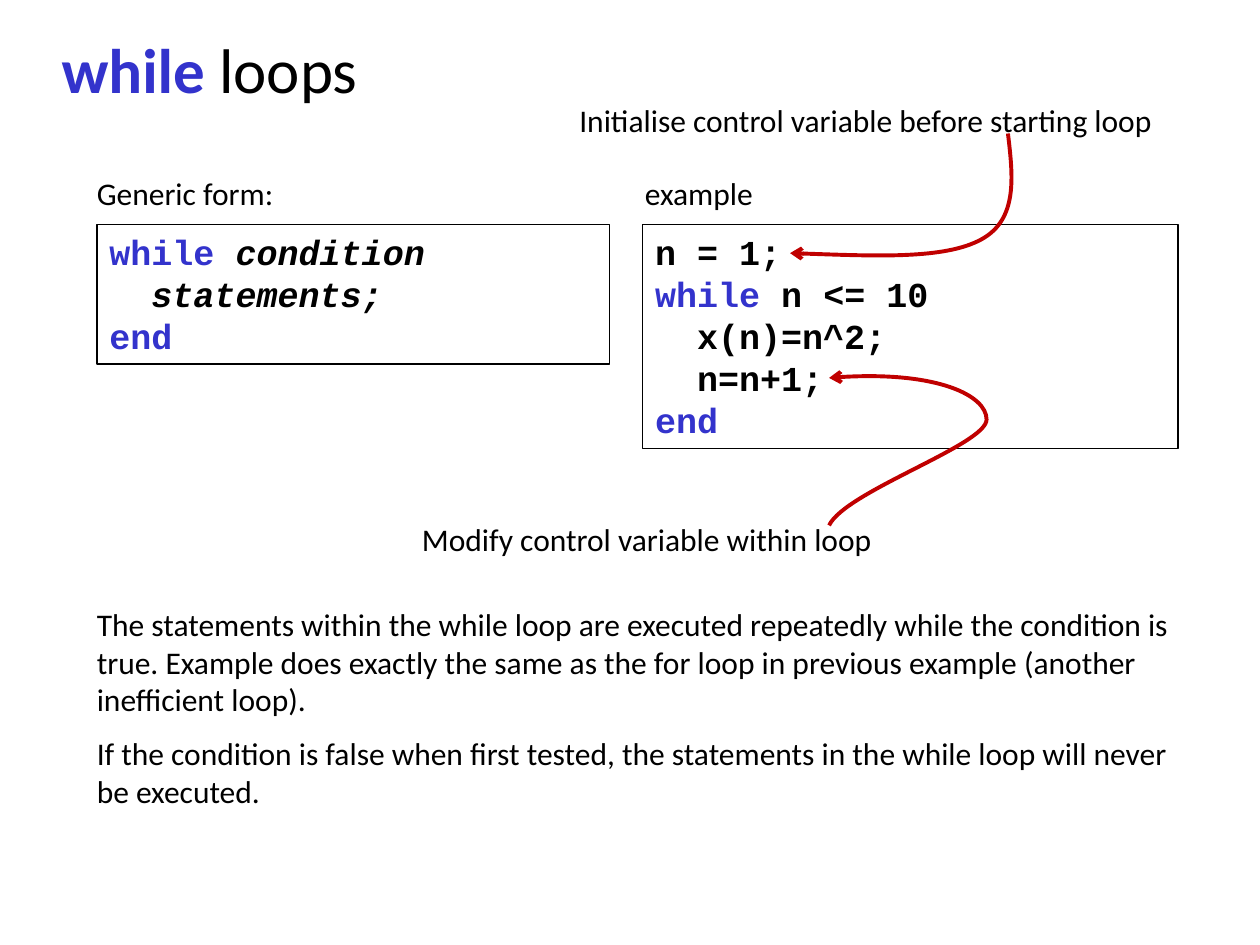
from lxml import etree
from pptx import Presentation
from pptx.dml.color import RGBColor
from pptx.enum import shapes, text
from pptx.oxml import ns
from pptx.util import Inches, Pt

BLACK = RGBColor(0x00, 0x00, 0x00)
WHITE = RGBColor(0xFF, 0xFF, 0xFF)
KEYWORD = RGBColor(0x33, 0x33, 0xCC)
ARROW = RGBColor(0xC0, 0x00, 0x00)
BODY_FONT, CODE_FONT = "Calibri", "Courier New"

# Content: a line is a list of (words, style); style is "", "key" or "italic"
TITLE = [[("while", "key"), (" loops", "")]]
GENERIC_CODE = [
    [("while ", "key"), ("condition", "italic")],
    [("  ", ""), ("statements;", "italic")],
    [("end", "key")],
]
EXAMPLE_CODE = [
    [("n = 1;", "")],
    [("while", "key"), (" n <= 10", "")],
    [("  x(n)=n^2;", "")],
    [("  n=n+1;", "")],
    [("end", "key")],
]
EXPLANATION = [
    "The statements within the while loop are executed repeatedly while the "
    "condition is true. Example does exactly the same as the for loop in "
    "previous example (another inefficient loop).",
    "If the condition is false when first tested, the statements in the "
    "while loop will never be executed.",
]

# Places: left, top, width, height
TITLE_BOX = (0.39, 0.23, 9.22, 0.63)
EXPLANATION_BOX = (0.67, 4.75, 8.74, 1.75)
CODE_BOXES = [
    (GENERIC_CODE, (0.77, 1.78, 4.07, 1.11)),
    (EXAMPLE_CODE, (5.1, 1.78, 4.25, 1.78)),
]
LABELS = [
    ("Generic form:", (0.67, 1.33, 1.72, 0.4)),
    ("example", (5.02, 1.33, 1.15, 0.4)),
    ("Initialise control variable before starting loop", (4.5, 0.75, 4.8, 0.4)),
    ("Modify control variable within loop", (3.25, 4.08, 3.81, 0.4)),
]
# Start point, then control, control, end for each Bézier segment
CURVES = [
    [(8, 1.06), (8.04, 1.4), (8.08, 1.74), (7.79, 1.9),
     (7.5, 2.06), (6.89, 2.03), (6.27, 2.01)],
    [(6.58, 4.17), (6.71, 3.9), (7.83, 3.53), (7.83, 3.33),
     (7.83, 3.14), (7.41, 2.93), (6.58, 3)],
]


def write_lines(shape, lines, font, size, bold=False):
    frame = shape.text_frame
    frame.word_wrap = True
    for number, line in enumerate(lines):
        paragraph = frame.paragraphs[0] if number == 0 else frame.add_paragraph()
        paragraph.alignment = text.PP_ALIGN.LEFT
        for words, style in line:
            run = paragraph.add_run()
            run.text = words
            run.font.name, run.font.size = font, Pt(size)
            run.font.bold = bold or style == "key"
            run.font.italic = style == "italic"
            run.font.color.rgb = KEYWORD if style == "key" else BLACK
    return frame


def add_text(slide, box, lines, size=18):
    shape = slide.shapes.add_textbox(*map(Inches, box))
    return write_lines(shape, lines, BODY_FONT, size)


def add_code(slide, lines, box):
    shape = slide.shapes.add_shape(shapes.MSO_SHAPE.RECTANGLE, *map(Inches, box))
    shape.shadow.inherit = False
    shape.fill.solid()
    shape.fill.fore_color.rgb = WHITE
    shape.line.color.rgb = BLACK
    shape.line.width = Pt(0.75)
    frame = write_lines(shape, lines, CODE_FONT, 20, bold=True)
    frame.vertical_anchor = text.MSO_ANCHOR.TOP


def add_curved_arrow(slide, points):
    start, *rest = [(Inches(x), Inches(y)) for x, y in points]
    builder = slide.shapes.build_freeform(*start)
    builder.add_line_segments(rest, close=False)
    arrow = builder.convert_to_shape()
    arrow.shadow.inherit = False
    arrow.fill.background()
    arrow.line.color.rgb = ARROW
    arrow.line.width = Pt(2.25)

    # Turn every three straight steps into one Bézier segment
    steps = list(arrow.element.iter(ns.qn("a:lnTo")))
    outline = steps[0].getparent()
    for first in range(0, len(steps), 3):
        bezier = etree.SubElement(outline, ns.qn("a:cubicBezTo"))
        for step in steps[first:first + 3]:
            bezier.append(step[0])
            outline.remove(step)

    line = arrow.element.spPr.find(ns.qn("a:ln"))
    etree.SubElement(line, ns.qn("a:tailEnd"), type="arrow")


def main():
    deck = Presentation()
    deck.slide_width, deck.slide_height = Inches(10), Inches(7.5)
    slide = deck.slides.add_slide(deck.slide_layouts[6])

    # Title
    title = add_text(slide, TITLE_BOX, TITLE, 36)
    title.vertical_anchor = text.MSO_ANCHOR.MIDDLE

    # Code boxes with their labels
    for lines, box in CODE_BOXES:
        add_code(slide, lines, box)
    for label, box in LABELS:
        add_text(slide, box, [[(label, "")]])

    # Explanation
    explanation = add_text(slide, EXPLANATION_BOX,
                           [[(words, "")] for words in EXPLANATION])
    explanation.paragraphs[1].space_before = Pt(9)

    # Arrows from the remarks to the code
    for points in CURVES:
        add_curved_arrow(slide, points)

    deck.save("out.pptx")


if __name__ == "__main__":
    main()
